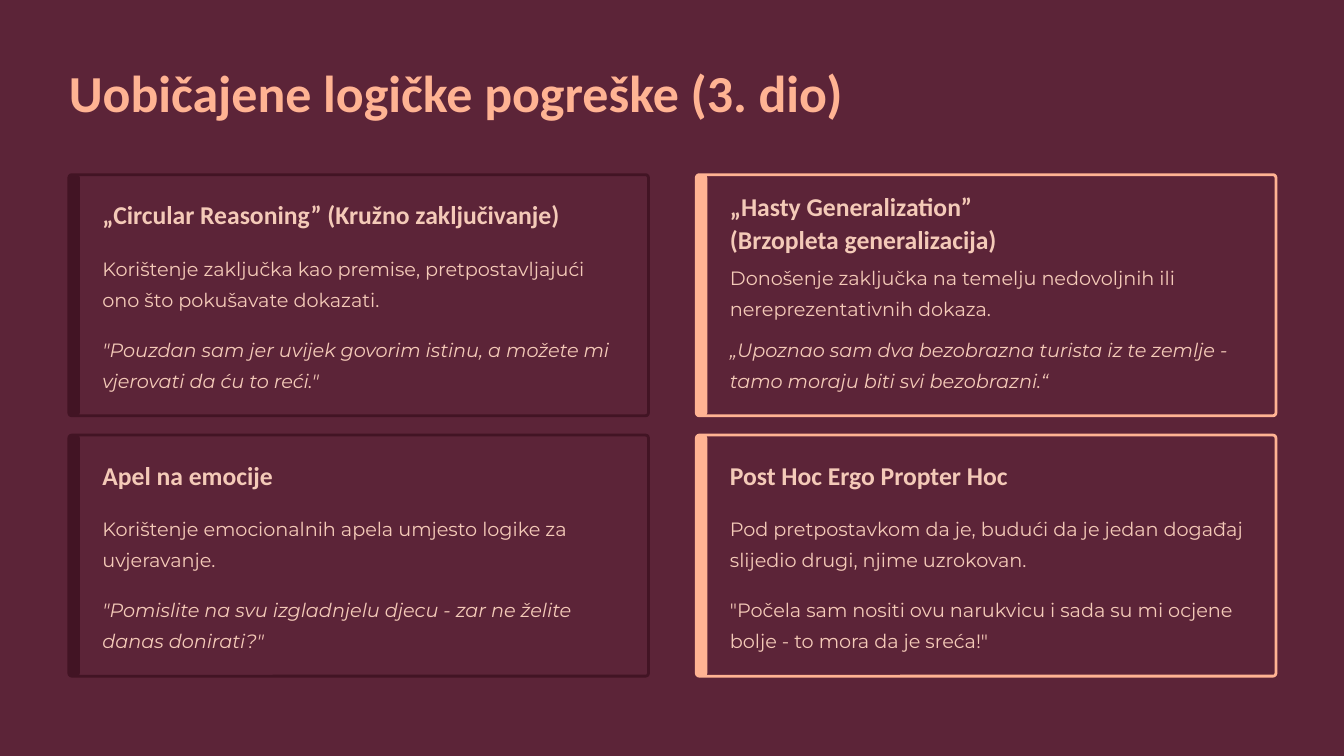
from dataclasses import dataclass

from pptx import Presentation
from pptx import util as u
from pptx.dml.color import RGBColor
from pptx.enum import shapes, text


@dataclass(frozen=True)
class Type:
    font: str
    size: float
    leading: float
    color: str
    bold: bool = False
    italic: bool = False


class Theme:
    ground, dark, peach, cream = "5C2438", "421424", "FFB393", "F4CAB8"
    border = 2.4
    title = Type("Calibri", 44.5, 56, peach, bold=True)
    heading = Type("Calibri", 22, 28, cream, bold=True)
    body = Type("Montserrat", 16.5, 26.5, cream)
    example = Type("Montserrat", 16.5, 26.5, cream, italic=True)


@dataclass(frozen=True)
class Fallacy:
    heading: tuple
    meaning: str
    example: str
    example_type: Type = Theme.example


WIDTH, HEIGHT = 16, 9
LEFT, TOP = 0.82, 2.08
CARD_W, CARD_H = 6.9, 2.87
COLUMN_STEP, ROW_STEP = 7.47, 3.1
BAR_W, INDENT, TEXT_W, TEXT_H = 0.13, 0.4, 6.23, 0.75
COLUMN_COLORS = (Theme.dark, Theme.peach)
# Offsets of heading, meaning and example, by number of heading lines
TEXT_ROWS = {1: (0.27, 0.89, 1.85), 2: (0.17, 1.0, 1.85)}

FALLACIES = (
    (
        Fallacy(
            ("„Circular Reasoning” (Kružno zaključivanje)",),
            "Korištenje zaključka kao premise, pretpostavljajući ono što pokušavate dokazati.",
            '"Pouzdan sam jer uvijek govorim istinu, a možete mi vjerovati da ću to reći."',
        ),
        Fallacy(
            ("„Hasty Generalization”", "(Brzopleta generalizacija)"),
            "Donošenje zaključka na temelju nedovoljnih ili nereprezentativnih dokaza.",
            "„Upoznao sam dva bezobrazna turista iz te zemlje - tamo moraju biti svi bezobrazni.“",
        ),
    ),
    (
        Fallacy(
            ("Apel na emocije",),
            "Korištenje emocionalnih apela umjesto logike za uvjeravanje.",
            '"Pomislite na svu izgladnjelu djecu - zar ne želite danas donirati?"',
        ),
        Fallacy(
            ("Post Hoc Ergo Propter Hoc",),
            "Pod pretpostavkom da je, budući da je jedan događaj slijedio drugi, njime uzrokovan.",
            '"Počela sam nositi ovu narukvicu i sada su mi ocjene bolje - to mora da je sreća!"',
            Theme.body,
        ),
    ),
)


def inches(*lengths):
    return [u.Inches(length) for length in lengths]


def rgb(color):
    return RGBColor.from_string(color)


def write(frame, lines, style, wrap=True):
    """Fill a text frame with one paragraph per line."""
    frame.auto_size = text.MSO_AUTO_SIZE.NONE
    frame.word_wrap = wrap
    frame.vertical_anchor = text.MSO_ANCHOR.TOP
    frame.margin_left = frame.margin_right = frame.margin_top = frame.margin_bottom = 0
    for number, line in enumerate(lines):
        paragraph = frame.add_paragraph() if number else frame.paragraphs[0]
        paragraph.alignment = text.PP_ALIGN.LEFT
        paragraph.line_spacing = u.Pt(style.leading)
        run = paragraph.add_run()
        run.text = line
        font = run.font
        font.name, font.size = style.font, u.Pt(style.size)
        font.bold, font.italic = style.bold, style.italic
        font.color.rgb = rgb(style.color)


def add_title(slide, wording):
    title = slide.shapes.title
    title.left, title.top, title.width, title.height = inches(LEFT, 0.69, 10.05, 0.78)
    write(title.text_frame, [wording], Theme.title, wrap=False)


def add_text(slide, left, top, height, lines, style, wrap=True):
    box = slide.shapes.add_textbox(*inches(left, top, TEXT_W, height))
    write(box.text_frame, lines, style, wrap)


def add_panel(slide, left, top, width, rounding, fill, border=None):
    panel = slide.shapes.add_shape(
        shapes.MSO_SHAPE.ROUNDED_RECTANGLE, *inches(left, top, width, CARD_H)
    )
    panel.adjustments[0] = rounding
    panel.shadow.inherit = False
    panel.fill.solid()
    panel.fill.fore_color.rgb = rgb(fill)
    if border:
        panel.line.color.rgb = rgb(border)
        panel.line.width = u.Pt(Theme.border)
    else:
        panel.line.fill.background()


def add_card(slide, left, top, accent, fallacy):
    add_panel(slide, left, top, CARD_W, 0.012, Theme.ground, accent)
    add_panel(slide, left, top, BAR_W, 0.263, accent)
    heading_y, meaning_y, example_y = TEXT_ROWS[len(fallacy.heading)]
    indent = left + INDENT
    heading_h = 0.39 * len(fallacy.heading)
    add_text(slide, indent, top + heading_y, heading_h, fallacy.heading, Theme.heading, wrap=False)
    add_text(slide, indent, top + meaning_y, TEXT_H, [fallacy.meaning], Theme.body)
    add_text(slide, indent, top + example_y, TEXT_H, [fallacy.example], fallacy.example_type)


def main():
    deck = Presentation()
    deck.slide_width, deck.slide_height = inches(WIDTH, HEIGHT)
    slide = deck.slides.add_slide(deck.slide_layouts.get_by_name("Title Only"))
    slide.background.fill.solid()
    slide.background.fill.fore_color.rgb = rgb(Theme.ground)
    add_title(slide, "Uobičajene logičke pogreške (3. dio)")
    for row, fallacies in enumerate(FALLACIES):
        for column, fallacy in enumerate(fallacies):
            left, top = LEFT + column * COLUMN_STEP, TOP + row * ROW_STEP
            add_card(slide, left, top, COLUMN_COLORS[column], fallacy)
    deck.save("out.pptx")


if __name__ == "__main__":
    main()
